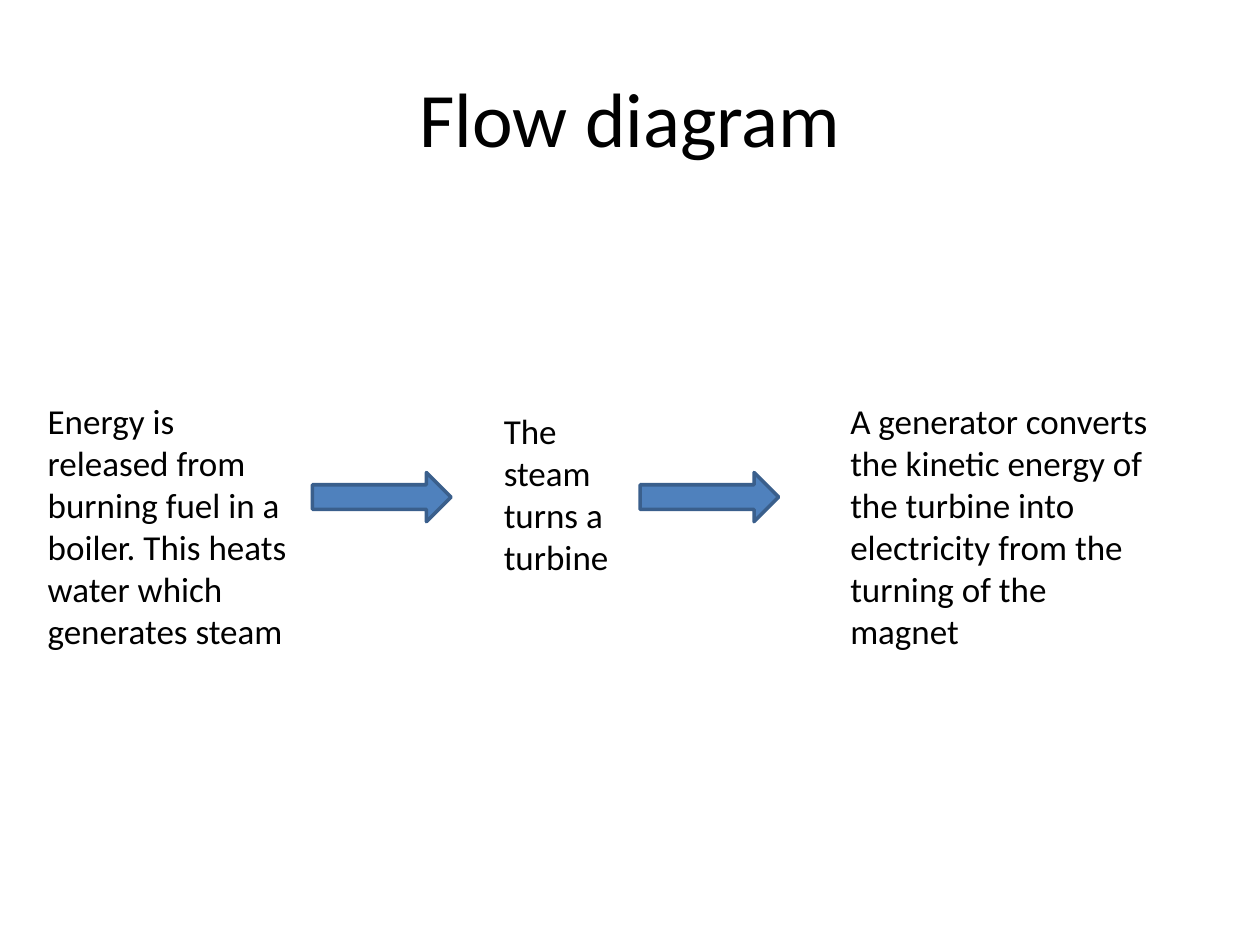
from pptx import Presentation
from pptx.dml.color import RGBColor
from pptx.enum.shapes import MSO_SHAPE as Shape
from pptx.enum.text import MSO_ANCHOR as Anchor, MSO_AUTO_SIZE as AutoSize, PP_ALIGN as Align
from pptx.util import Inches, Pt

CELL = 0.1
FONT = "Calibri"
ARROW_ROW = 37.5
STEPS = [
    ("Energy is released from burning fuel in a boiler. "
     "This heats water which generates steam", (2.8, 31.2, 21.3, 21.2)),
    ("The steam turns a turbine", (39, 32, 13.4, 14.5)),
    ("A generator converts the kinetic energy of the turbine into "
     "electricity from the turning of the magnet", (66.5, 31.2, 26, 21.2)),
]
ARROW_COLUMNS = (24.8, 50.8)


def grid(*cells):
    return [Inches(cell * CELL) for cell in cells]


def color(value):
    return RGBColor.from_string(value)


def format_text(text_frame, size, align):
    for paragraph in text_frame.paragraphs:
        paragraph.alignment = align
        for run in paragraph.runs:
            run.font.name = FONT
            run.font.size = Pt(size)
            run.font.color.rgb = color("000000")


def set_title(slide, text):
    title = slide.shapes.title
    title.left, title.top, title.width, title.height = grid(5, 3, 90, 12.5)
    title.text_frame.text = text
    title.text_frame.vertical_anchor = Anchor.MIDDLE
    format_text(title.text_frame, 44, Align.CENTER)


def add_step(slide, text, cells):
    text_frame = slide.shapes.add_textbox(*grid(*cells)).text_frame
    text_frame.word_wrap = True
    text_frame.auto_size = AutoSize.SHAPE_TO_FIT_TEXT
    text_frame.text = text
    format_text(text_frame, 20, Align.LEFT)


def add_arrow(slide, column):
    arrow = slide.shapes.add_shape(Shape.RIGHT_ARROW, *grid(column, ARROW_ROW, 11, 3.9))
    arrow.shadow.inherit = False
    arrow.fill.solid()
    arrow.fill.fore_color.rgb = color("4F81BD")
    arrow.line.color.rgb = color("3A5F8C")
    arrow.line.width = Pt(2)


def main():
    presentation = Presentation()
    presentation.slide_width, presentation.slide_height = grid(100, 75)
    slide = presentation.slides.add_slide(presentation.slide_layouts.get_by_name("Title Only"))
    set_title(slide, "Flow diagram")
    for text, cells in STEPS:
        add_step(slide, text, cells)
    for column in ARROW_COLUMNS:
        add_arrow(slide, column)
    presentation.save("out.pptx")


if __name__ == "__main__":
    main()
